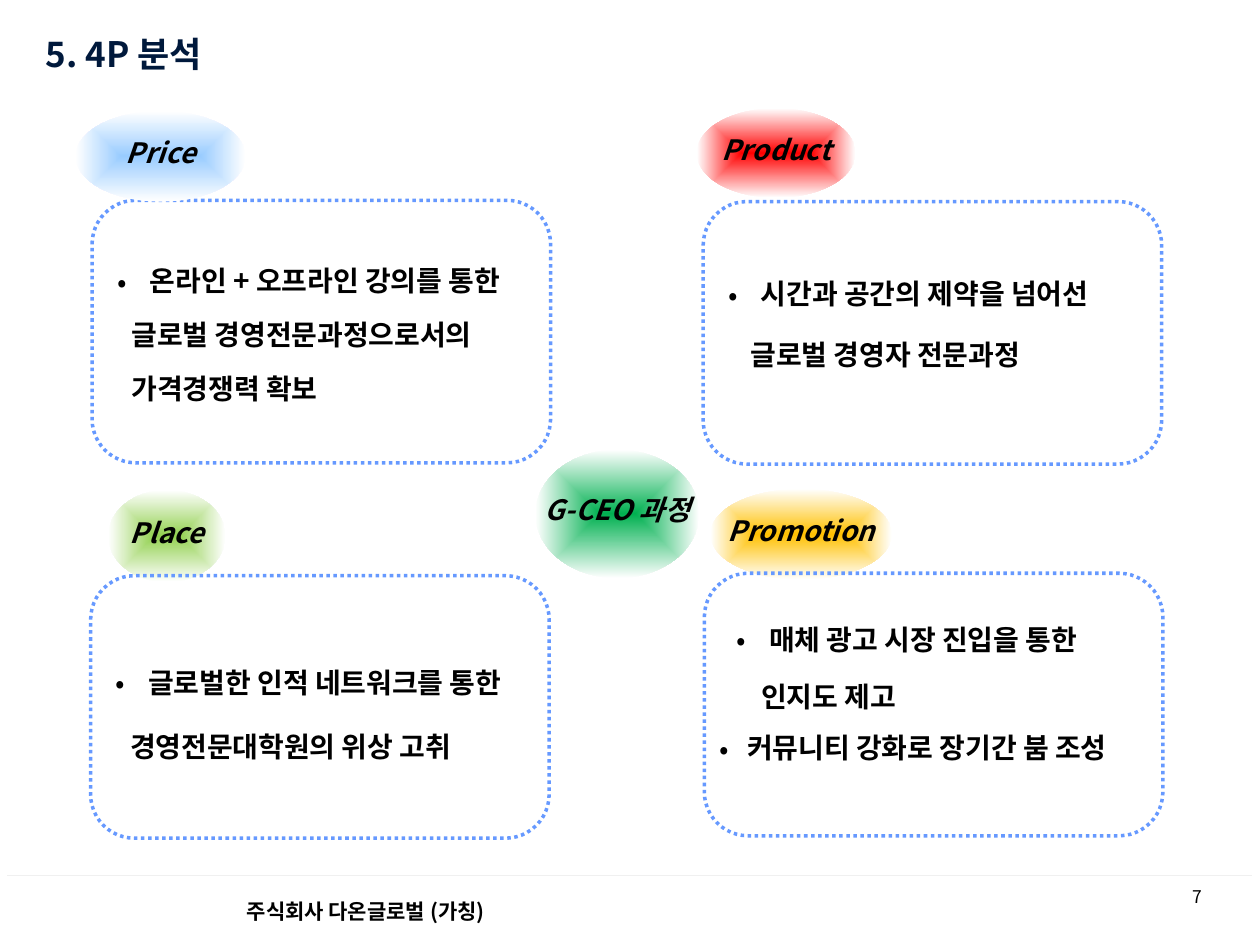
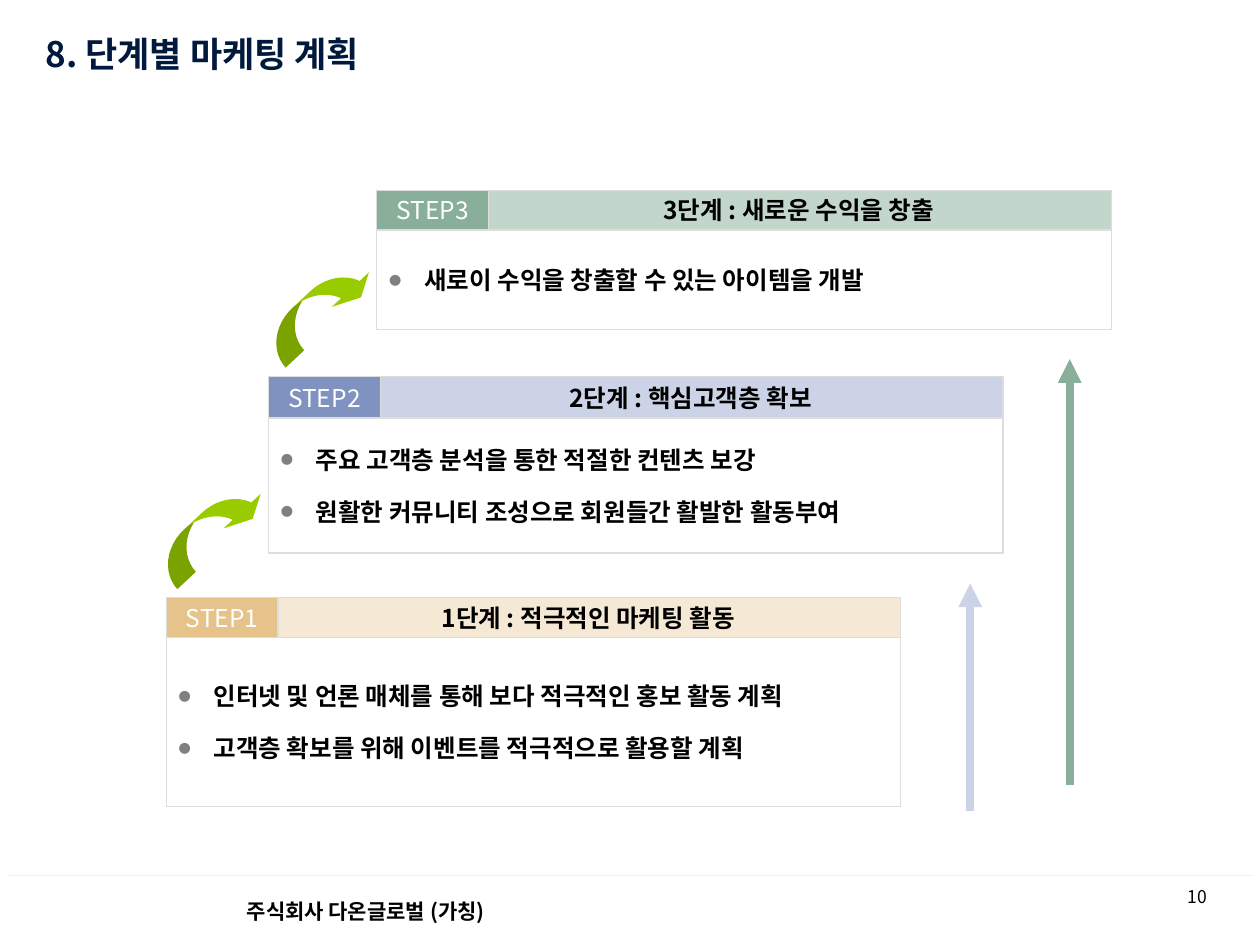
"""Builds two slides of a business plan: the 4P analysis and the staged marketing plan."""
from lxml import etree
from pptx import Presentation
from pptx.dml.color import RGBColor
from pptx.enum import dml, shapes, text
from pptx.oxml import ns
from pptx.util import Pt

FONT = "Noto Sans CJK KR"
COLORS = {
    "title": "00193C", "text": "000000", "white": "FFFFFF", "rule": "F0F0F0",
    "dots": "6699FF", "edge": "DDDDDD", "bullet": "808080", "curve": "99CC00",
    "price": "99CCFF", "product": "FF0000", "place": "92D050",
    "promotion": "FFC000", "course": "00B050",
    "step1": "E5C38B", "step2": "8092C0", "step3": "89AF9B",
    "head1": "EDD5AD", "head2": "CCD3E6", "head3": "89AF9B",
}
FOOTER = "주식회사 다온글로벌 (가칭)"
SHAPE, ALIGN = shapes.MSO_SHAPE, text.PP_ALIGN

LABELS = [
    ("Promotion", "promotion", (406, 279.4, 103.7, 51.8)),
    ("Product", "product", (398.2, 61.9, 90.7, 51.1)),
    ("Place", "place", (61.9, 280, 67, 52.6)),
    ("Price", "price", (43.2, 63.4, 97.2, 51.8)),
    ("G-CEO 과정", "course", (306, 257, 93.6, 73.4)),
]
PANEL_SIZE = (262, 150)
# Each line: text, bulleted, left margin, line pitch
PANELS = [
    {"at": (52.6, 114.5), "top": 16.8, "lines": [
        ("온라인 + 오프라인 강의를 통한", True, 24.5, 31),
        ("글로벌 경영전문과정으로서의", False, 14, 31),
        ("가격경쟁력 확보", False, 14, 31)]},
    {"at": (51.8, 329), "top": 26, "lines": [
        ("글로벌한 인적 네트워크를 통한", True, 24.5, 37),
        ("경영전문대학원의 위상 고취", False, 14, 37)]},
    {"at": (401.8, 115.2), "top": 19.5, "lines": [
        ("시간과 공간의 제약을 넘어선", True, 24.5, 35),
        ("글로벌 경영자 전문과정", False, 18.5, 35)]},
    {"at": (402.5, 327.6), "top": 6.8, "lines": [
        ("매체 광고 시장 진입을 통한", True, 28.5, 33),
        ("인지도 제고", False, 24, 33),
        ("커뮤니티 강화로 장기간 붐 조성", True, 16, 29)]},
]

STEPS = [
    {"at": (95, 341.3), "head": 23, "body": 96.5, "alpha": 50,
     "title": "1단계 : 적극적인 마케팅 활동",
     "items": ["인터넷 및 언론 매체를 통해 보다 적극적인 홍보 활동 계획",
               "고객층 확보를 위해 이벤트를 적극적으로 활용할 계획"]},
    {"at": (153.4, 215.3), "head": 23.7, "body": 77, "alpha": 100,
     "title": "2단계 : 핵심고객층 확보",
     "items": ["주요 고객층 분석을 통한 적절한 컨텐츠 보강",
               "원활한 커뮤니티 조성으로 회원들간 활발한 활동부여"]},
    {"at": (215.3, 108.7), "head": 22.7, "body": 57, "alpha": 50,
     "title": "3단계 : 새로운 수익을 창출",
     "items": ["새로이 수익을 창출할 수 있는 아이템을 개발"]},
]
STEP_W, TAB_W, HEAD_X = 419.8, 64, 62.6
RISES = [(554.4, 463.7, 333.4, "head2"), (611.3, 448.6, 205.2, "head3")]


def rgb(name):
    """Return the named colour."""
    return RGBColor.from_string(COLORS[name])


def sub(parent, tag, **attrs):
    """Append a DrawingML element."""
    return etree.SubElement(parent, ns.qn(tag), {k: str(v) for k, v in attrs.items()})


def write(tf, words, size=14, color="text", bold=False, italic=False, align=ALIGN.LEFT,
          bullet=None, bullet_pct=100, bullet_color="text", left=0, hang=0,
          spacing=None, before=0):
    """Add one formatted paragraph to a text frame."""
    p = tf.paragraphs[0] if not tf.text else tf.add_paragraph()
    p.alignment = align
    pPr = p._p.get_or_add_pPr()
    pPr.set("marL", str(int(Pt(left))))
    pPr.set("indent", str(-int(Pt(hang))))
    if bullet:
        sub(sub(pPr, "a:buClr"), "a:srgbClr", val=COLORS[bullet_color])
        sub(pPr, "a:buSzPct", val=bullet_pct * 1000)
        sub(pPr, "a:buFont", typeface=FONT)
        sub(pPr, "a:buChar", char=bullet)
    else:
        sub(pPr, "a:buNone")
    if spacing:
        p.line_spacing = spacing
    if before:
        p.space_before = Pt(before)
    r = p.add_run()
    r.text = words
    r.font.size, r.font.bold, r.font.italic = Pt(size), bold, italic
    r.font.name, r.font.color.rgb = FONT, rgb(color)
    sub(r._r.get_or_add_rPr(), "a:ea", typeface=FONT)


def add_box(s, kind, box, fill=None, line=None, width=0.75, alpha=100, wrap=False):
    """Add a preset shape with plain fill and line."""
    sp = s.shapes.add_shape(kind, *map(Pt, box))
    sp.shadow.inherit = False
    if fill:
        sp.fill.solid()
        sp.fill.fore_color.rgb = rgb(fill)
        if alpha < 100:
            clr = sp._element.spPr.find(".//" + ns.qn("a:srgbClr"))
            sub(clr, "a:alpha", val=alpha * 1000)
    else:
        sp.fill.background()
    if line:
        sp.line.color.rgb, sp.line.width = rgb(line), Pt(width)
    else:
        sp.line.fill.background()
    sp.text_frame.word_wrap = wrap
    sp.text_frame.vertical_anchor = text.MSO_ANCHOR.MIDDLE
    return sp


def add_line(s, x1, y1, x2, y2, color, width, arrow=False):
    """Add a straight line, optionally with an arrowhead at its end."""
    c = s.shapes.add_connector(shapes.MSO_CONNECTOR.STRAIGHT, *map(Pt, (x1, y1, x2, y2)))
    c.line.color.rgb, c.line.width = rgb(color), Pt(width)
    if arrow:
        sub(c.line._get_or_add_ln(), "a:tailEnd", type="triangle")
    sub(c._element.spPr, "a:effectLst")


def add_slide(prs, title, number):
    """Add a slide with title, footer rule, footer text and page number."""
    s = prs.slides.add_slide(prs.slide_layouts[5])
    t = s.shapes.title
    t.left, t.top, t.width, t.height = map(Pt, (18.7, 9.4, 517, 41.8))
    tf = t.text_frame
    tf.auto_size = text.MSO_AUTO_SIZE.NONE
    tf.vertical_anchor = text.MSO_ANCHOR.MIDDLE
    write(tf, title, size=20, color="title", bold=True)
    add_line(s, 4.3, 500.4, 715.7, 500.4, "rule", 0.75)
    page = s.shapes.add_textbox(*map(Pt, (667.4, 502.6, 33.8, 22.3)))
    page.text_frame.word_wrap = True
    write(page.text_frame, number, size=10, align=ALIGN.CENTER)
    foot = add_box(s, SHAPE.RECTANGLE, (0, 503.3, 558, 34.6), fill="white", wrap=True)
    foot.text_frame.margin_left = Pt(141)
    write(foot.text_frame, FOOTER, size=12, bold=True)
    return s


def add_label(s, words, color, box):
    """Add an ellipse that fades from its colour to white."""
    sp = add_box(s, SHAPE.OVAL, box)
    sp.fill.gradient()
    for stop, name, pos in zip(sp.fill.gradient_stops, (color, "white"), (0, 1)):
        stop.color.rgb, stop.position = rgb(name), pos
    grad = sp._element.spPr.find(ns.qn("a:gradFill"))
    grad.remove(grad.find(ns.qn("a:lin")))
    fade = sub(grad, "a:path", **{"path": "shape"})
    sub(fade, "a:fillToRect", **dict.fromkeys("ltrb", 50000))
    write(sp.text_frame, words, size=16, bold=True, italic=True,
          align=ALIGN.CENTER, spacing=0.7)


def add_panel(s, panel):
    """Add a dotted rounded panel with its lines of text."""
    sp = add_box(s, SHAPE.FLOWCHART_ALTERNATE_PROCESS, panel["at"] + PANEL_SIZE,
                 line="dots", width=2, wrap=True)
    sp.line.dash_style = dml.MSO_LINE.ROUND_DOT
    tf = sp.text_frame
    tf.vertical_anchor = text.MSO_ANCHOR.TOP
    tf.margin_left, tf.margin_right, tf.margin_top = Pt(1.2), Pt(0), Pt(panel["top"])
    for words, bulleted, left, pitch in panel["lines"]:
        write(tf, words, size=16, bold=True, left=left, spacing=Pt(pitch),
              bullet="•" if bulleted else None,
              hang=min(left, 18.5) if bulleted else 0)


def add_step(s, number, step):
    """Add a step: header bar, list body and number tab."""
    (x, y), head, body = step["at"], step["head"], step["body"]
    bar = add_box(s, SHAPE.RECTANGLE, (x + HEAD_X, y, STEP_W - HEAD_X, head),
                  fill=f"head{number}", line="edge", alpha=step["alpha"])
    write(bar.text_frame, step["title"], bold=True, align=ALIGN.CENTER)
    box = add_box(s, SHAPE.RECTANGLE, (x, y + head, STEP_W, body), line="edge", wrap=True)
    for i, item in enumerate(step["items"]):
        write(box.text_frame, item, bold=True, bullet="●", bullet_pct=50,
              bullet_color="bullet", left=20, hang=20, before=13 if i else 0)
    tab = add_box(s, SHAPE.RECTANGLE, (x, y, TAB_W, head), fill=f"step{number}", line="edge")
    write(tab.text_frame, f"STEP{number}", color="white", align=ALIGN.CENTER)
    if number > 1:
        curve = add_box(s, SHAPE.CURVED_DOWN_ARROW, (x - 69.5, y + body, 73.4, 22.3),
                        fill="curve")
        curve.rotation = 317
        for i, value in enumerate((0.65, 1.3, 0.33)):
            curve.adjustments[i] = value


def main():
    """Build and save the slides."""
    prs = Presentation()
    prs.slide_width, prs.slide_height = Pt(720), Pt(540)

    s = add_slide(prs, "5. 4P 분석", "7")
    add_panel(s, PANELS[0])
    for label in LABELS:
        add_label(s, *label)
    for panel in PANELS[1:]:
        add_panel(s, panel)

    s = add_slide(prs, "8. 단계별 마케팅 계획", "10")
    for number, step in enumerate(STEPS, 1):
        add_step(s, number, step)
    for x, bottom, top, color in RISES:
        add_line(s, x, bottom, x, top, color, 4.5, arrow=True)

    prs.save("out.pptx")


if __name__ == "__main__":
    main()
